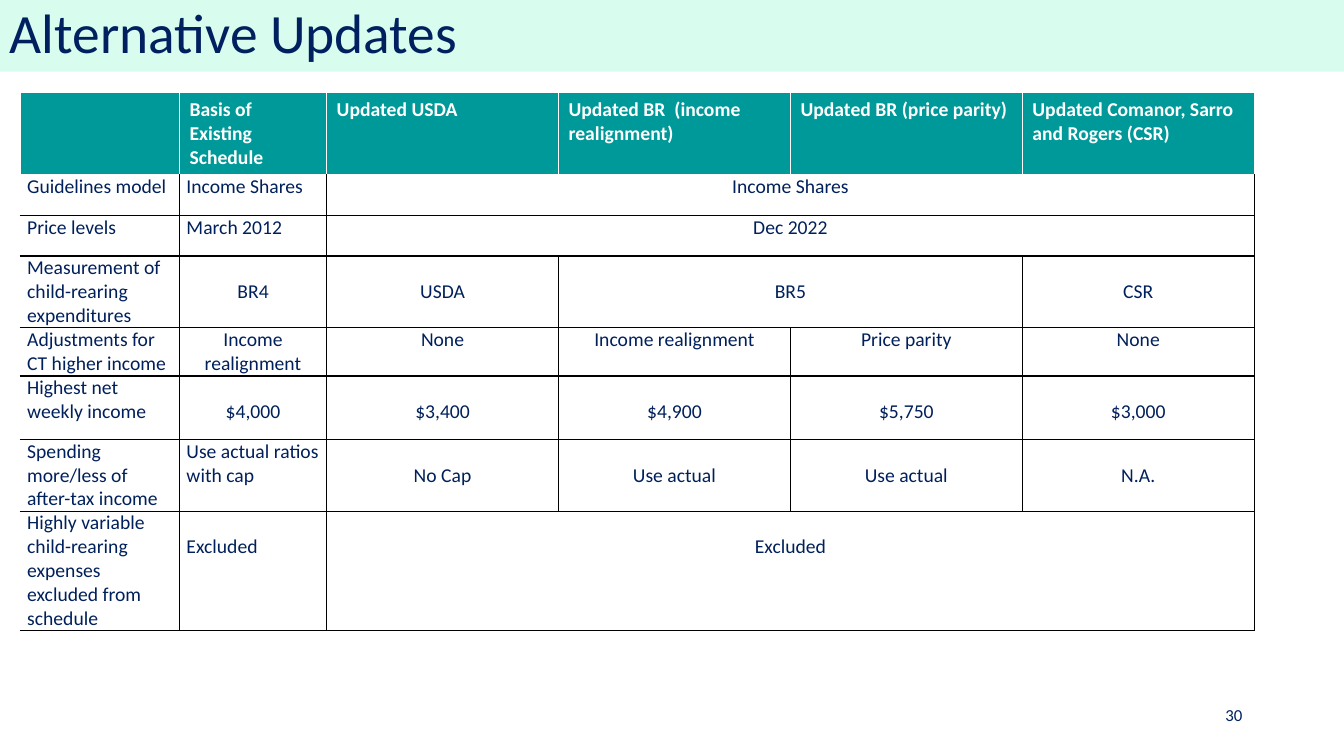
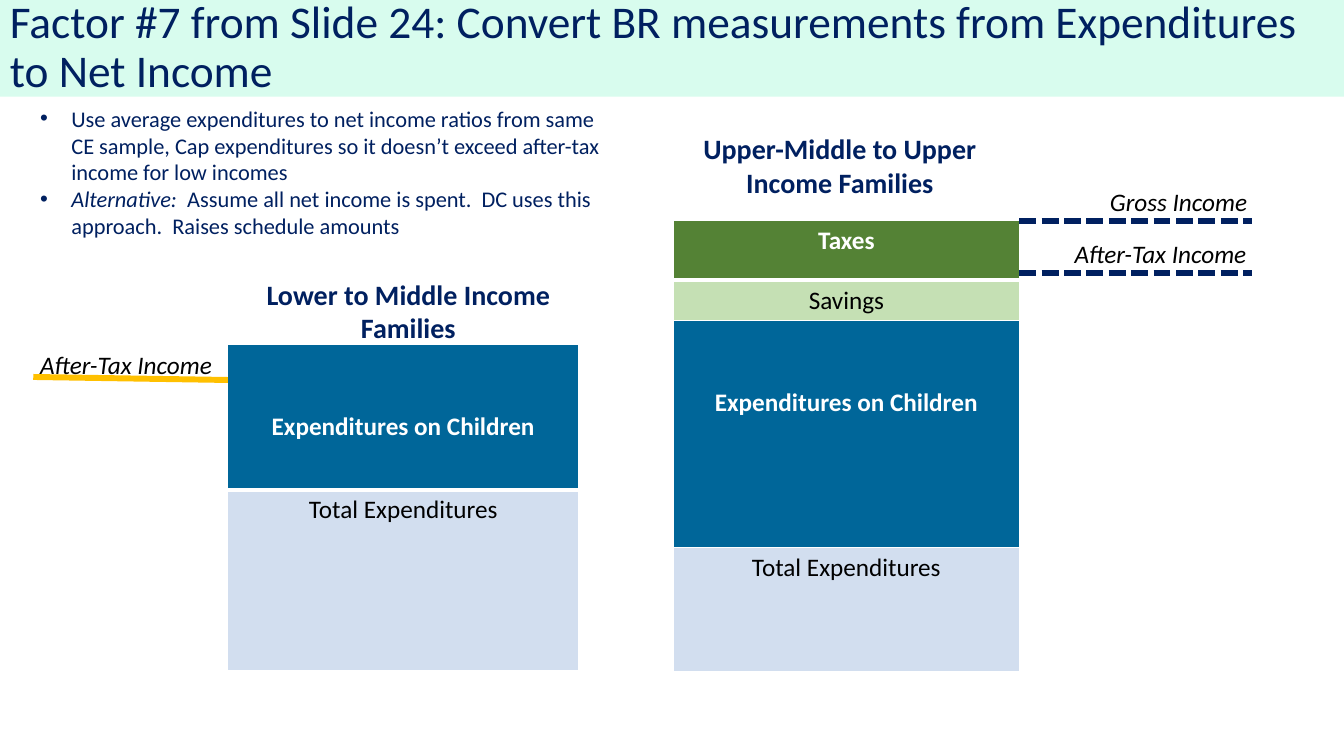
"""Build two slides on alternative updates to a child support schedule."""
from dataclasses import dataclass

from lxml import etree
from pptx import Presentation
from pptx.dml.color import RGBColor
from pptx.enum.dml import MSO_LINE
from pptx.enum.shapes import MSO_CONNECTOR, MSO_SHAPE
from pptx.enum.text import MSO_ANCHOR, PP_ALIGN
from pptx.oxml.ns import qn
from pptx.util import Inches, Pt

LEFT, CENTER, RIGHT = PP_ALIGN.LEFT, PP_ALIGN.CENTER, PP_ALIGN.RIGHT
TOP, MIDDLE = MSO_ANCHOR.TOP, MSO_ANCHOR.MIDDLE
RECTANGLE, STRAIGHT = MSO_SHAPE.RECTANGLE, MSO_CONNECTOR.STRAIGHT
DASHED = MSO_LINE.SQUARE_DOT


@dataclass(frozen=True)
class Theme:
    font: str = "Calibri"
    navy: str = "002060"
    ink: str = "00205B"
    black: str = "000000"
    white: str = "FFFFFF"
    band: str = "D8FCEE"
    teal: str = "009999"
    blue: str = "006699"
    pale_blue: str = "D2DEEF"
    green: str = "548235"
    pale_green: str = "C5E0B4"
    gold: str = "FFC000"
    title: float = 39.6
    long_title: float = 32.4
    heading: float = 20
    label: float = 18
    bullet: float = 16
    table: float = 14
    number: float = 12


THEME = Theme()
SLIDE_WIDTH, SLIDE_HEIGHT = 13.33, 7.5
DEFAULT_MARGINS = (0.1, 0.05, 0.1, 0.05)

COLUMN_WIDTHS = [1.58, 1.46] + [2.3] * 4
HEADER_HEIGHT = 0.8
HEADERS = ["", "Basis of Existing Schedule", "Updated USDA",
           "Updated BR  (income realignment)", "Updated BR (price parity)",
           "Updated Comanor, Sarro and Rogers (CSR)"]
HIGH, LOW = 0, 0.24
UPDATE_ROWS = [
    (0.41, "Guidelines model", ("Income Shares", LEFT, HIGH), HIGH,
     [("Income Shares", 4)]),
    (0.4, "Price levels", ("March 2012", LEFT, HIGH), HIGH, [("Dec 2022", 4)]),
    (0.71, "Measurement of child-rearing expenditures", ("BR4", CENTER, LOW), LOW,
     [("USDA", 1), ("BR5", 2), ("CSR", 1)]),
    (0.48, "Adjustments for CT higher income",
     ("Income realignment", CENTER, HIGH), HIGH,
     [("None", 1), ("Income realignment", 1), ("Price parity", 1), ("None", 1)]),
    (0.63, "Highest net weekly income", ("$4,000", CENTER, LOW), LOW,
     [("$3,400", 1), ("$4,900", 1), ("$5,750", 1), ("$3,000", 1)]),
    (0.71, "Spending more/less of after-tax income",
     ("Use actual ratios with cap", LEFT, HIGH), LOW,
     [("No Cap", 1), ("Use actual", 1), ("Use actual", 1), ("N.A.", 1)]),
    (1.18, "Highly variable child-rearing expenses excluded from schedule",
     ("Excluded", LEFT, LOW), LOW, [("Excluded", 4)]),
]

CHILDREN_DROP = 0.66
LOWER_STACK = [
    (1.44, "Expenditures on Children", THEME.blue, True, CHILDREN_DROP),
    (1.79, "Total Expenditures", THEME.pale_blue, False, 0.05),
]
UPPER_STACK = [
    (0.59, "Taxes", THEME.green, True, 0.05),
    (0.38, "Savings", THEME.pale_green, False, 0.05),
    (2.25, "Expenditures on Children", THEME.blue, True, CHILDREN_DROP),
    (1.23, "Total Expenditures", THEME.pale_blue, False, 0.05),
]
STACKS = [((2.26, 3.42), 3.48, LOWER_STACK), ((6.68, 2.19), 3.43, UPPER_STACK)]
STACK_HEADINGS = [
    ((2.26, 2.7, 3.58, 0.77), "Lower to Middle Income Families"),
    ((6.54, 1.26, 3.58, 0.77), "Upper-Middle to Upper Income Families"),
]
INCOME_LABELS = [
    ((0.3, 3.42, 2.34, 0.4), "After-Tax Income"),
    ((10.91, 1.8, 1.87, 0.4), "Gross Income"),
    ((10.56, 2.32, 2.34, 0.4), "After-Tax Income"),
]
INCOME_LINES = [
    ((0.33, 3.74, 2.26, 3.77), THEME.gold, 4.25, None),
    ((10.11, 2.19, 12.42, 2.19), THEME.navy, 4, DASHED),
    ((10.11, 2.71, 12.42, 2.71), THEME.navy, 4, DASHED),
]
METHOD_BULLETS = [
    [("Use average expenditures to net income ratios from same CE sample, "
      "Cap expenditures so it doesn’t exceed after-tax income for low incomes", False)],
    [("Alternative: ", True),
     (" Assume all net income is spent.  DC uses this approach.  "
      "Raises schedule amounts", False)],
]


def color(value):
    return RGBColor.from_string(value)


def add_bullet(paragraph):
    properties = paragraph._p.get_or_add_pPr()
    properties.set("marL", str(Inches(0.31)))
    properties.set("indent", str(-Inches(0.31)))
    etree.SubElement(properties, qn("a:buFont")).set("typeface", "Arial")
    etree.SubElement(properties, qn("a:buChar")).set("char", "•")


def write_text(frame, content, *, size, ink, bold=False, italic=False, align=LEFT,
               spacing=None, bullets=False):
    paragraphs = [[(content, italic)]] if isinstance(content, str) else content
    for index, runs in enumerate(paragraphs):
        paragraph = frame.add_paragraph() if index else frame.paragraphs[0]
        paragraph.alignment = align
        if spacing:
            paragraph.line_spacing = spacing
        if bullets:
            add_bullet(paragraph)
        for text, slanted in runs:
            run = paragraph.add_run()
            run.text = text
            font = run.font
            font.name, font.size = THEME.font, Pt(size)
            font.bold, font.italic = bold, slanted
            font.color.rgb = color(ink)


def add_text(slide, box, content, anchor=TOP, **text_format):
    frame = slide.shapes.add_textbox(*map(Inches, box)).text_frame
    frame.word_wrap = True
    frame.vertical_anchor = anchor
    write_text(frame, content, **text_format)


def add_titled_slide(presentation, title, height, size):
    slide = presentation.slides.add_slide(presentation.slide_layouts[6])
    band = slide.shapes.add_shape(RECTANGLE, 0, 0, Inches(SLIDE_WIDTH), Inches(height))
    band.shadow.inherit = False
    band.fill.solid()
    band.fill.fore_color.rgb = color(THEME.band)
    band.line.fill.background()
    band.text_frame.word_wrap = True
    band.text_frame.vertical_anchor = MIDDLE
    write_text(band.text_frame, title, size=size, ink=THEME.navy, spacing=0.9)
    return slide


def add_line(slide, ends, ink, width, dash):
    line = slide.shapes.add_connector(STRAIGHT, *map(Inches, ends))
    line.line.color.rgb = color(ink)
    line.line.width = Pt(width)
    if dash:
        line.line.dash_style = dash
    etree.SubElement(line._element.spPr, qn("a:effectLst"))


def add_table(slide, position, widths, heights):
    size = (sum(widths), sum(heights))
    table = slide.shapes.add_table(len(heights), len(widths),
                                   *map(Inches, position + size)).table
    table.first_row = table.horz_banding = False
    for column, width in zip(table.columns, widths):
        column.width = Inches(width)
    for row, height in zip(table.rows, heights):
        row.height = Inches(height)
    return table


def style_cell(cell, fill, border, edges, margins=DEFAULT_MARGINS):
    """Draw the edges, a dict from side letter (L, R, T, B) to width in points."""
    properties = cell._tc.get_or_add_tcPr()
    for side in "LRTB":
        if side in edges:
            line = etree.SubElement(properties, qn(f"a:ln{side}"), w=str(Pt(edges[side])))
            solid = etree.SubElement(line, qn("a:solidFill"))
            etree.SubElement(solid, qn("a:srgbClr")).set("val", border)
    cell.fill.solid()
    cell.fill.fore_color.rgb = color(fill)
    (cell.margin_left, cell.margin_top,
     cell.margin_right, cell.margin_bottom) = map(Inches, margins)


def add_updates_table(slide):
    heights = [HEADER_HEIGHT] + [row[0] for row in UPDATE_ROWS]
    table = add_table(slide, (0.2, 0.92), COLUMN_WIDTHS, heights)
    for column, header in enumerate(HEADERS):
        cell = table.cell(0, column)
        style_cell(cell, THEME.teal, THEME.white, dict.fromkeys("LRT", 1))
        if header:
            write_text(cell.text_frame, header, size=THEME.table, ink=THEME.white, bold=True)
    for row, (_, label, basis, drop, updates) in enumerate(UPDATE_ROWS, 1):
        entries = [(label, LEFT, HIGH, 1), basis + (1,)]
        entries += [(text, CENTER, drop, span) for text, span in updates]
        column = 0
        for text, align, top, span in entries:
            sides = "RB" + ("L" if column else "") + ("T" if row > 1 else "")
            for offset in range(span):
                style_cell(table.cell(row, column + offset), THEME.white, THEME.black,
                           dict.fromkeys(sides, 1), (0.07, top, 0.07, 0))
            cell = table.cell(row, column)
            if span > 1:
                cell.merge(table.cell(row, column + span - 1))
            write_text(cell.text_frame, text, size=THEME.table, ink=THEME.ink, align=align)
            column += span


def add_stack(slide, position, width, layers):
    table = add_table(slide, position, [width], [layer[0] for layer in layers])
    for row, (_, text, fill, strong, drop) in enumerate(layers):
        cell = table.cell(row, 0)
        edges = {"L": 1, "R": 1, "T": 3 if row == 1 else 1, "B": 1 if row else 3}
        style_cell(cell, fill, THEME.white, edges, (0.1, drop, 0.1, 0.05))
        write_text(cell.text_frame, text, size=THEME.label, bold=strong, align=CENTER,
                   ink=THEME.white if strong else THEME.black)


def build_updates_slide(presentation):
    slide = add_titled_slide(presentation, "Alternative Updates", 0.71, THEME.title)
    add_updates_table(slide)
    add_text(slide, (11.94, 6.97, 0.48, 0.24), "30", anchor=MIDDLE,
             size=THEME.number, ink=THEME.navy, align=RIGHT)


def build_conversion_slide(presentation):
    slide = add_titled_slide(
        presentation,
        "Factor #7 from Slide 24: Convert BR measurements from Expenditures to Net Income",
        0.96, THEME.long_title)
    for stack in STACKS:
        add_stack(slide, *stack)
    for box, heading in STACK_HEADINGS:
        add_text(slide, box, heading, size=THEME.heading, ink=THEME.navy,
                 bold=True, align=CENTER)
    for line in INCOME_LINES:
        add_line(slide, *line)
    for box, label in INCOME_LABELS:
        add_text(slide, box, label, size=THEME.label, ink=THEME.black, italic=True)
    add_text(slide, (0.3, 0.99, 5.77, 1.45), METHOD_BULLETS, size=THEME.bullet,
             ink=THEME.navy, bullets=True)


def main():
    presentation = Presentation()
    presentation.slide_width = Inches(SLIDE_WIDTH)
    presentation.slide_height = Inches(SLIDE_HEIGHT)
    build_updates_slide(presentation)
    build_conversion_slide(presentation)
    presentation.save("out.pptx")


if __name__ == "__main__":
    main()
